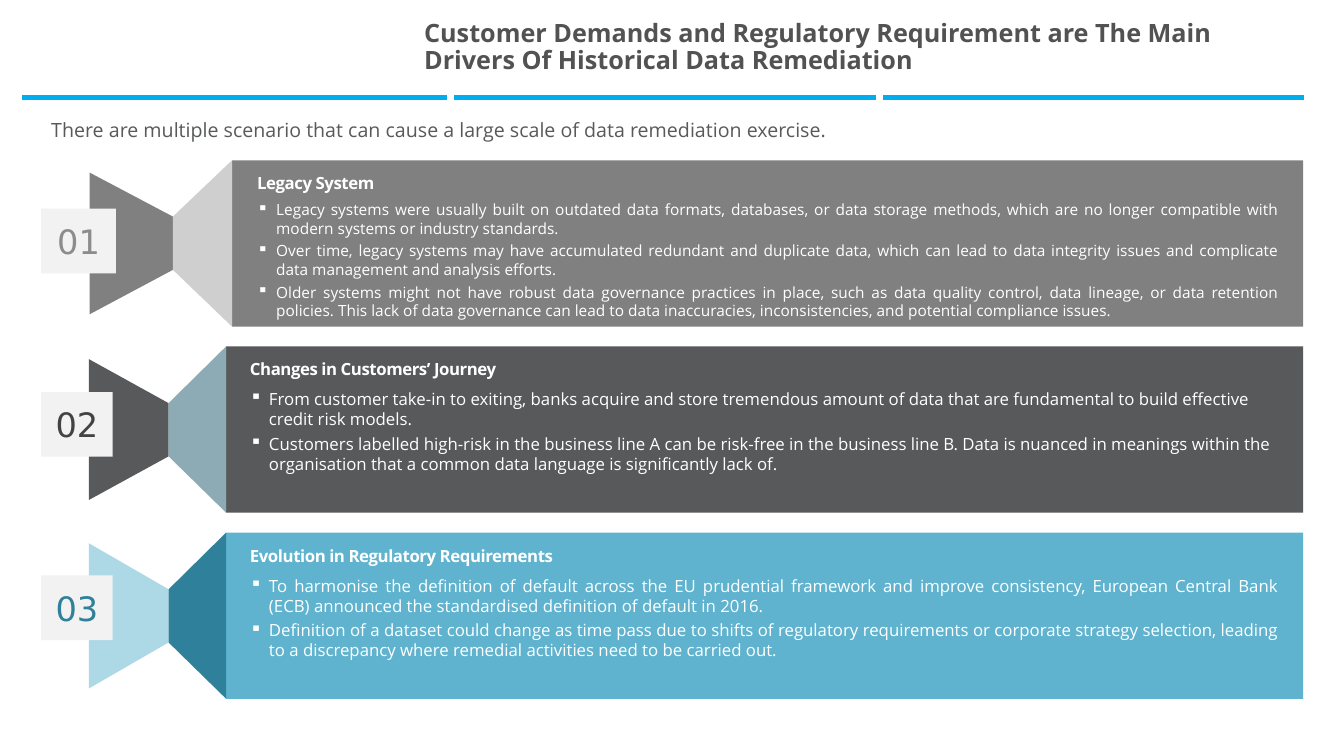
"""Build a slide on the three drivers of historical data remediation."""
import pptx
import pptx.dml.color
import pptx.enum.shapes
import pptx.enum.text
import pptx.oxml.ns
import pptx.util
from lxml import etree

Cm, Pt, qn = pptx.util.Cm, pptx.util.Pt, pptx.oxml.ns.qn
ALIGN, ANCHOR = pptx.enum.text.PP_ALIGN, pptx.enum.text.MSO_ANCHOR
RECTANGLE = pptx.enum.shapes.MSO_SHAPE.RECTANGLE
COLORS = {
    "rule": "00AEEF", "title": "525252", "charcoal": "58595B", "white": "FFFFFF",
    "badge": "F2F2F2", "gray": "808080", "silver": "BBBBBB", "number gray": "8C8C8C",
    "dark": "424344", "light blue": "ADD8E6", "teal": "2F809A", "sky": "60B3CE",
}
PANEL_TOP, PANEL_PITCH, PANEL_HEIGHT, PANEL_RIGHT = 4.04, 4.69, 4.19, 32.84
TEXT_RIGHT, BADGE_LEFT, NECK_HALF = 32.25, 1.04, 0.67

DRIVERS = [
    {"number": "01", "heading": "Legacy System", "size": 11, "align": ALIGN.JUSTIFY,
     "panel": "gray", "wedge": "gray", "digits": "number gray",
     "funnel": [("silver", 100), ("white", 30)],
     "left": 5.85, "neck": 4.36, "wedge_left": 2.26, "wedge_half": 1.78,
     "text_left": 6.48, "bullets_top": 1.01, "badge_top": 1.22, "badge_width": 1.88,
     "bullets": [
         "Legacy systems were usually built on outdated data formats, databases, or data storage methods, which are no longer compatible with modern systems or industry standards.",
         "Over time, legacy systems may have accumulated redundant and duplicate data, which can lead to data integrity issues and complicate data management and analysis efforts.",
         "Older systems might not have robust data governance practices in place, such as data quality control, data lineage, or data retention policies. This lack of data governance can lead to data inaccuracies, inconsistencies, and potential compliance issues."]},
    {"number": "02", "heading": "Changes in Customers’ Journey", "size": 12, "align": ALIGN.LEFT,
     "panel": "charcoal", "wedge": "charcoal", "digits": "dark",
     "funnel": [("light blue", 100), ("dark", 30)],
     "left": 5.7, "neck": 4.25, "wedge_left": 2.24, "wedge_half": 1.78,
     "text_left": 6.3, "bullets_top": 1.07, "badge_top": 1.15, "badge_width": 1.8,
     "bullets": [
         "From customer take-in to exiting, banks acquire and store tremendous amount of data that are fundamental to build effective credit risk models.",
         "Customers labelled high-risk in the business line A can be risk-free in the business line B. Data is nuanced in meanings within the organisation that a common data language is significantly lack of."]},
    {"number": "03", "heading": "Evolution in Regulatory Requirements", "size": 12, "align": ALIGN.JUSTIFY,
     "panel": "sky", "wedge": "light blue", "digits": "teal",
     "funnel": [("teal", 100)],
     "left": 5.7, "neck": 4.25, "wedge_left": 2.24, "wedge_half": 1.83,
     "text_left": 6.3, "bullets_top": 1.08, "badge_top": 1.08, "badge_width": 1.8,
     "bullets": [
         "To harmonise the definition of default across the EU prudential framework and improve consistency, European Central Bank (ECB) announced the standardised definition of default in 2016.",
         "Definition of a dataset could change as time pass due to shifts of regulatory requirements or corporate strategy selection, leading to a discrepancy where remedial activities need to be carried out."]},
]

deck = pptx.Presentation()
deck.slide_width, deck.slide_height = Cm(33.87), Cm(19.05)
slide = deck.slides.add_slide(deck.slide_layouts[6])


def paint(shape, color, opacity=100):
    """Fill a shape with a flat colour, without outline or shadow."""
    shape.shadow.inherit = False
    shape.fill.solid()
    shape.fill.fore_color.rgb = pptx.dml.color.RGBColor.from_string(COLORS[color])
    shape.line.fill.background()
    if opacity < 100:
        tint = shape.fill._xPr.find(qn("a:solidFill"))[0]
        etree.SubElement(tint, qn("a:alpha"), val=str(opacity * 1000))


def write(shape, lines, size, color, font="Open Sans", bold=False, align=ALIGN.LEFT,
          anchor=ANCHOR.TOP, insets=(0, 0), bullet=None):
    """Write one paragraph per line; insets are horizontal and vertical in cm."""
    frame = shape.text_frame
    frame.word_wrap = True
    frame.vertical_anchor = anchor
    frame.margin_left = frame.margin_right = Cm(insets[0])
    frame.margin_top = frame.margin_bottom = Cm(insets[1])
    for index, line in enumerate(lines):
        paragraph = frame.add_paragraph() if index else frame.paragraphs[0]
        paragraph.alignment = align
        if bullet:
            properties = paragraph._p.get_or_add_pPr()
            properties.set("marL", str(Cm(0.48)))
            properties.set("indent", str(-Cm(0.48)))
            etree.SubElement(properties, qn("a:buChar"), char=bullet)
            paragraph.space_after = Pt(3)
        run = paragraph.add_run()
        run.text = line
        run.font.name, run.font.size, run.font.bold = font, Pt(size), bold
        run.font.color.rgb = pptx.dml.color.RGBColor.from_string(COLORS[color])
    return frame


rule = slide.shapes.add_table(1, 3, Cm(0.56), Cm(2.4), Cm(32.4), Cm(0.13)).table
rule.first_row = rule.horz_banding = False
for column, cell in enumerate(rule.rows[0].cells):
    cell.margin_left = cell.margin_right = cell.margin_top = cell.margin_bottom = 0
    etree.SubElement(cell.text_frame.paragraphs[0]._p, qn("a:endParaRPr"), sz="100")
    for side in ("L", "R", "T", "B"):
        if side == "R" or (side == "L" and column):
            border = etree.SubElement(cell._tc.get_or_add_tcPr(), qn("a:ln" + side), w=str(Pt(6)))
            stroke = etree.SubElement(border, qn("a:solidFill"))
            etree.SubElement(stroke, qn("a:srgbClr"), val=COLORS["white"])
        else:
            border = etree.SubElement(cell._tc.get_or_add_tcPr(), qn("a:ln" + side), w="0")
            etree.SubElement(border, qn("a:noFill"))
    cell.fill.solid()
    cell.fill.fore_color.rgb = pptx.dml.color.RGBColor.from_string(COLORS["rule"])

title = slide.shapes.add_textbox(Cm(10.44), Cm(0.69), Cm(22.43), Cm(1.04))
title_frame = write(
    title, ["Customer Demands and Regulatory Requirement are The Main Drivers Of Historical Data Remediation"],
    18, "title", bold=True, anchor=ANCHOR.MIDDLE, insets=(0.25, 0.13))
title_frame.paragraphs[0].line_spacing = 0.9

intro = slide.shapes.add_textbox(Cm(1.04), Cm(2.84), Cm(31.8), Cm(0.86))
write(intro, ["There are multiple scenario that can cause a large scale of data remediation exercise."],
      14, "charcoal", align=ALIGN.JUSTIFY, insets=(0.25, 0.13))

for row, driver in enumerate(DRIVERS):
    top = PANEL_TOP + row * PANEL_PITCH
    middle = top + PANEL_HEIGHT / 2
    left, neck, text_left = driver["left"], driver["neck"], driver["text_left"]

    panel = slide.shapes.add_shape(
        RECTANGLE, Cm(left), Cm(top), Cm(PANEL_RIGHT - left), Cm(PANEL_HEIGHT))
    paint(panel, driver["panel"])

    flares = [(driver["wedge_left"], driver["wedge_half"], driver["wedge"], 100)]
    flares += [(left, PANEL_HEIGHT / 2, color, opacity) for color, opacity in driver["funnel"]]
    for edge, half, color, opacity in flares:
        corners = [(edge, middle - half), (edge, middle + half),
                   (neck, middle + NECK_HALF), (neck, middle - NECK_HALF)]
        points = [(x * 100, y * 100) for x, y in corners]
        outline = slide.shapes.build_freeform(*points[0], scale=Cm(0.01))
        outline.add_line_segments(points[1:], close=True)
        paint(outline.convert_to_shape(), color, opacity)

    heading = slide.shapes.add_textbox(Cm(text_left), Cm(top + 0.2), Cm(11.33), Cm(0.76))
    heading_frame = write(heading, [driver["heading"]], 12, "white", bold=True,
                          anchor=ANCHOR.BOTTOM, insets=(0, 0.13))
    heading_frame.paragraphs[0].runs[0].font._element.set("spc", "-30")

    bullets = slide.shapes.add_textbox(
        Cm(text_left), Cm(top + driver["bullets_top"]), Cm(TEXT_RIGHT - text_left), Cm(2.8))
    write(bullets, driver["bullets"], driver["size"], "white", align=driver["align"], bullet="▪")

    badge = slide.shapes.add_shape(
        RECTANGLE, Cm(BADGE_LEFT), Cm(top + driver["badge_top"]), Cm(driver["badge_width"]), Cm(1.63))
    paint(badge, "badge")
    write(badge, [driver["number"]], 24, driver["digits"], font="DejaVu Sans",
          align=ALIGN.CENTER, anchor=ANCHOR.MIDDLE)

deck.save("out.pptx")
